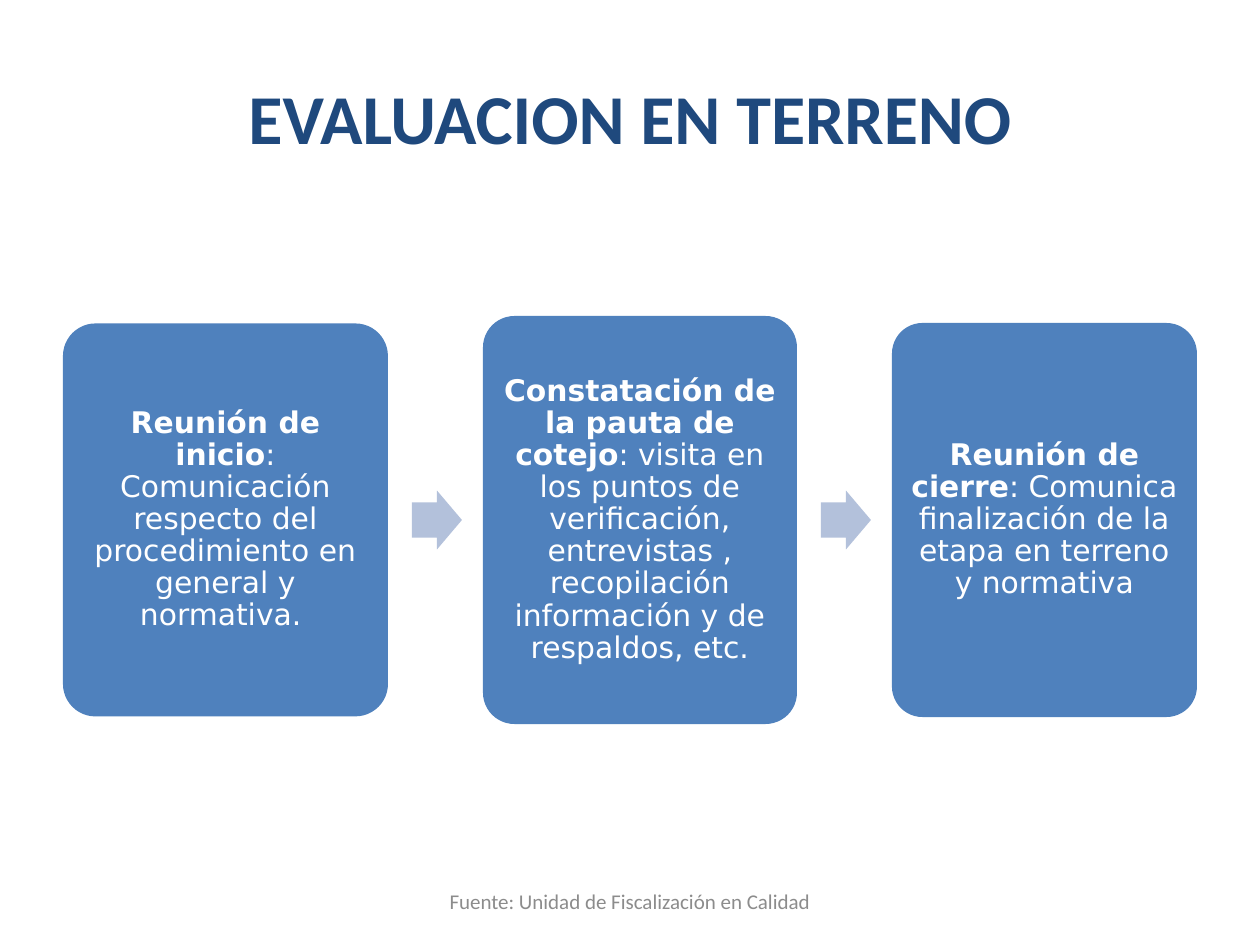
from pptx import Presentation
from pptx import util as u
from pptx.dml.color import RGBColor
from pptx.enum import shapes, text

PX = 914400 / 126
NAVY = RGBColor(0x1F, 0x49, 0x7D)
BLUE = RGBColor(0x4F, 0x81, 0xBD)
PALE_BLUE = RGBColor(0xB3, 0xC1, 0xDB)
WHITE = RGBColor(0xFF, 0xFF, 0xFF)
GRAY = RGBColor(0x8C, 0x8C, 0x8C)

MIDDLE = 520  # shared vertical centre of cards and arrows


def px(n):
    return u.Emu(round(n * PX))


class Deck:
    heading_font = "Calibri"
    card_font = "DejaVu Sans"

    def __init__(self, width, height):
        self.prs = Presentation()
        self.prs.slide_width, self.prs.slide_height = px(width), px(height)
        self.s = self.prs.slides.add_slide(self.prs.slide_layouts[6])

    def set_text(self, sp, runs, font, size, color):
        """Fill a shape with one centred paragraph of (wording, bold) runs."""
        tf = sp.text_frame
        tf.word_wrap = True
        tf.vertical_anchor = text.MSO_ANCHOR.MIDDLE
        p = tf.paragraphs[0]
        p.alignment = text.PP_ALIGN.CENTER
        for wording, bold in runs:
            r = p.add_run()
            r.text = wording
            r.font.name, r.font.size, r.font.bold = font, u.Pt(size), bold
            r.font.color.rgb = color
        return p

    def label(self, x, y, w, h, wording, size, color, bold=False):
        sp = self.s.shapes.add_textbox(px(x), px(y), px(w), px(h))
        self.set_text(sp, [(wording, bold)], self.heading_font, size, color)

    def shape(self, kind, x, w, h, fill, adjustments):
        sp = self.s.shapes.add_shape(kind, px(x), px(MIDDLE - h / 2), px(w), px(h))
        sp.shadow.inherit = False
        sp.fill.solid()
        sp.fill.fore_color.rgb = fill
        sp.line.fill.background()
        for i, value in enumerate(adjustments):
            sp.adjustments[i] = value
        return sp

    def card(self, x, w, h, heading, body):
        sp = self.shape(shapes.MSO_SHAPE.ROUNDED_RECTANGLE, x, w, h, BLUE, [0.1])
        tf = sp.text_frame
        tf.margin_left = tf.margin_right = tf.margin_top = tf.margin_bottom = px(9)
        p = self.set_text(sp, [(heading, True), (body, False)], self.card_font, 17, WHITE)
        p.line_spacing = 0.9

    def arrow(self, x):
        self.shape(shapes.MSO_SHAPE.RIGHT_ARROW, x, 50, 59, PALE_BLUE, [0.6, 0.5])


CARDS = [
    (63, 325, 393, "Reunión de inicio",
     ": Comunicación respecto del procedimiento en general y normativa. "),
    (483, 314, 408, "Constatación de la pauta de cotejo",
     ": visita en los puntos de verificación, entrevistas , "
     "recopilación información y de respaldos, etc."),
    (892, 305, 394, "Reunión de cierre",
     ": Comunica finalización de la etapa en terreno y normativa"),
]


def main():
    deck = Deck(1260, 945)

    # Title
    deck.label(63, 38, 1134, 157, "EVALUACION EN TERRENO", 40, NAVY, bold=True)

    # Process steps, with an arrow after every card but the last
    for i, (x, w, h, heading, body) in enumerate(CARDS):
        deck.card(x, w, h, heading, body)
        if i < len(CARDS) - 1:
            deck.arrow(x + w + 24)

    # Source line
    deck.label(430, 876, 400, 50, "Fuente: Unidad de Fiscalización en Calidad", 12, GRAY)

    deck.prs.save("out.pptx")


if __name__ == "__main__":
    main()
